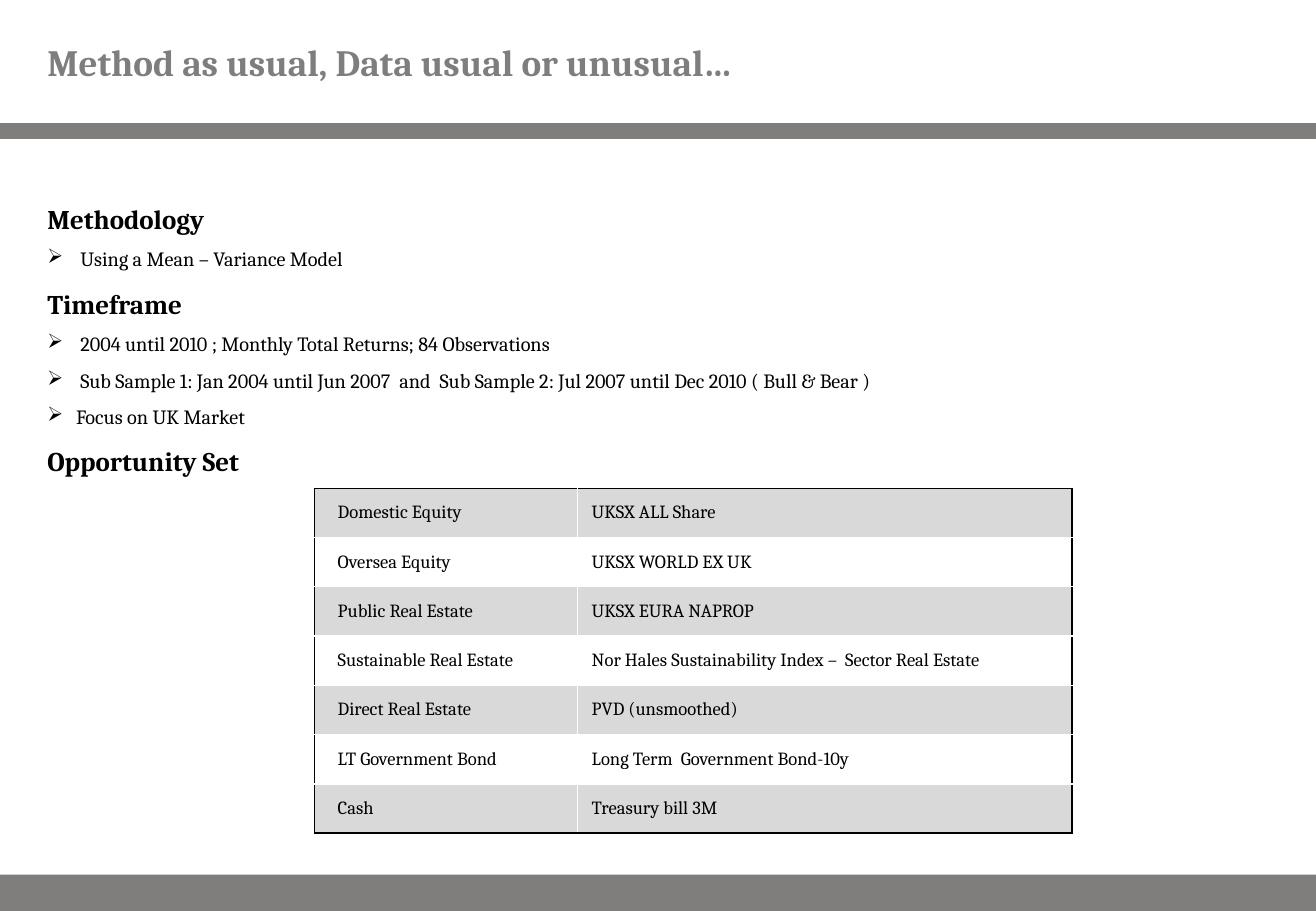
from lxml import etree
from pptx import Presentation
from pptx.dml.color import RGBColor
from pptx.enum.shapes import MSO_CONNECTOR, MSO_SHAPE
from pptx.enum.text import MSO_ANCHOR, MSO_AUTO_SIZE, PP_ALIGN
from pptx.oxml.ns import qn
from pptx.util import Cm, Pt

STRAIGHT = MSO_CONNECTOR.STRAIGHT
RECTANGLE = MSO_SHAPE.RECTANGLE
MIDDLE, TOP = MSO_ANCHOR.MIDDLE, MSO_ANCHOR.TOP
LEFT = PP_ALIGN.LEFT
NO_AUTOFIT = MSO_AUTO_SIZE.NONE

GRAY = RGBColor(0x7F, 0x7E, 0x7D)
BAND = RGBColor(0xD9, 0xD9, 0xD9)
BLACK = RGBColor(0, 0, 0)
WHITE = RGBColor(0xFF, 0xFF, 0xFF)

FONT = "Cambria"
TITLE_FORMAT = {"size": Pt(22), "bold": True}
HEADING_FORMAT = {"size": Pt(16), "bold": True}
ITEM_FORMAT = {"size": Pt(12), "bold": False}
CELL_FORMAT = {"size": Pt(11), "bold": False}

SLIDE_WIDTH, SLIDE_HEIGHT = Cm(27.51), Cm(19.05)
MARGIN = Cm(0.99)
WIDE_INDENT, NARROW_INDENT = Cm(0.69), Cm(0.6)

TITLE = "Method as usual, Data usual or unusual…"
# Each line is its text and its bullet indent; headings have no indent.
OUTLINE = [
    ("Methodology", None),
    ("Using a Mean – Variance Model", WIDE_INDENT),
    ("Timeframe", None),
    ("2004 until 2010 ; Monthly Total Returns; 84 Observations", WIDE_INDENT),
    ("Sub Sample 1: Jan 2004 until Jun 2007  and  Sub Sample 2: "
     "Jul 2007 until Dec 2010 ( Bull & Bear )", WIDE_INDENT),
    ("Focus on UK Market", NARROW_INDENT),
    ("Opportunity Set", None),
]
OPPORTUNITIES = [
    ("Domestic Equity", "UKSX ALL Share"),
    ("Oversea Equity", "UKSX WORLD EX UK"),
    ("Public Real Estate", "UKSX EURA NAPROP"),
    ("Sustainable Real Estate", "Nor Hales Sustainability Index –  Sector Real Estate"),
    ("Direct Real Estate", "PVD (unsmoothed)"),
    ("LT Government Bond", "Long Term  Government Bond-10y"),
    ("Cash", "Treasury bill 3M"),
]
COLUMN_WIDTHS = (Cm(5.49), Cm(10.34))
CELL_INDENTS = (Cm(0.48), Cm(0.3))


def format_text(paragraph, values, color=BLACK):
    font = paragraph.font
    for name, value in {"name": FONT, **values}.items():
        setattr(font, name, value)
    font.color.rgb = color


def format_frame(frame, side_margin, anchor):
    values = {"margin_left": side_margin, "margin_right": side_margin,
              "margin_top": 0, "margin_bottom": 0, "word_wrap": True,
              "auto_size": NO_AUTOFIT, "vertical_anchor": anchor}
    for name, value in values.items():
        setattr(frame, name, value)


def add_bullet(paragraph, indent):
    properties = paragraph._p.get_or_add_pPr()
    properties.set("marL", str(indent))
    properties.set("indent", str(-indent))
    etree.SubElement(properties, qn("a:buChar")).set("char", "➢")


def add_bands(slide, line_top, footer_top):
    line = slide.shapes.add_connector(STRAIGHT, 0, line_top, SLIDE_WIDTH, line_top)
    line.line.color.rgb = GRAY
    line.line.width = Pt(10)
    etree.SubElement(line._element.spPr, qn("a:effectLst"))

    footer = slide.shapes.add_shape(
        RECTANGLE, 0, footer_top, SLIDE_WIDTH, SLIDE_HEIGHT - footer_top)
    footer.shadow.inherit = False
    footer.fill.solid()
    footer.fill.fore_color.rgb = GRAY
    footer.line.fill.background()


def place_title(slide, left, top, width, height):
    title = slide.shapes.title
    title.left, title.top, title.width, title.height = left, top, width, height
    format_frame(title.text_frame, MARGIN, MIDDLE)
    title.text_frame.text = TITLE
    paragraph = title.text_frame.paragraphs[0]
    paragraph.alignment = LEFT
    format_text(paragraph, TITLE_FORMAT, GRAY)


def add_outline(slide, left, top, width, height):
    frame = slide.shapes.add_textbox(left, top, width, height).text_frame
    format_frame(frame, 0, TOP)
    for index, (text, indent) in enumerate(OUTLINE):
        paragraph = frame.add_paragraph() if index else frame.paragraphs[0]
        paragraph.text = text
        paragraph.line_spacing = 1.5
        if indent:
            add_bullet(paragraph, indent)
        format_text(paragraph, ITEM_FORMAT if indent else HEADING_FORMAT)


def set_borders(cell, colors):
    """Draw 1 pt borders in the order left, right, top, bottom."""
    properties = cell._tc.get_or_add_tcPr()
    for side, color in zip("LRTB", colors):
        border = etree.SubElement(properties, qn(f"a:ln{side}"), w=str(Pt(1)))
        fill = etree.SubElement(border, qn("a:solidFill"))
        etree.SubElement(fill, qn("a:srgbClr"), val=str(color))


def fill_cell(cell, text, indent, color):
    cell.fill.solid()
    cell.fill.fore_color.rgb = color
    cell.vertical_anchor = MIDDLE
    for side in ("left", "right", "top", "bottom"):
        setattr(cell, f"margin_{side}", 0)
    cell.text = text
    paragraph = cell.text_frame.paragraphs[0]
    paragraph._p.get_or_add_pPr().set("marL", str(indent))
    format_text(paragraph, CELL_FORMAT)


def add_opportunity_table(slide, left, top, height):
    row_count, column_count = len(OPPORTUNITIES), len(COLUMN_WIDTHS)
    table = slide.shapes.add_table(
        row_count, column_count, left, top, sum(COLUMN_WIDTHS), height).table
    table.first_row = table.horz_banding = False
    for column, width in zip(table.columns, COLUMN_WIDTHS):
        column.width = width
    for row, texts in enumerate(OPPORTUNITIES):
        for column, text in enumerate(texts):
            cell = table.cell(row, column)
            outer_sides = (column == 0, column == column_count - 1,
                           row == 0, row == row_count - 1)
            set_borders(cell, [BLACK if outer else WHITE for outer in outer_sides])
            fill_cell(cell, text, CELL_INDENTS[column], WHITE if row % 2 else BAND)


def main():
    presentation = Presentation()
    presentation.slide_width = SLIDE_WIDTH
    presentation.slide_height = SLIDE_HEIGHT
    slide = presentation.slides.add_slide(presentation.slide_layouts[5])
    add_bands(slide, Cm(2.74), Cm(18.29))
    place_title(slide, 0, 0, SLIDE_WIDTH, Cm(2.57))
    add_outline(slide, MARGIN, Cm(3.89), SLIDE_WIDTH - 2 * MARGIN, Cm(6.32))
    add_opportunity_table(slide, Cm(6.58), Cm(10.21), Cm(7.21))
    presentation.save("out.pptx")


if __name__ == "__main__":
    main()
